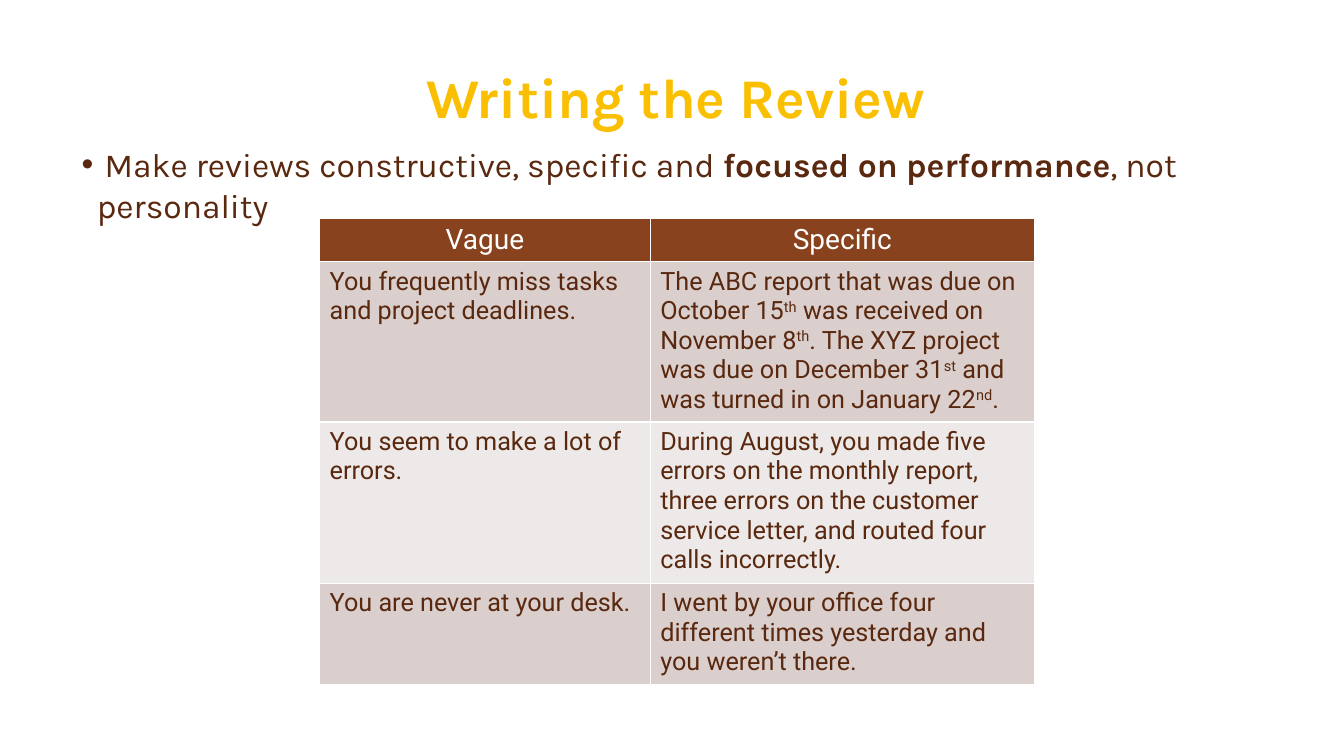
import pptx
import pptx.dml.color
import pptx.enum.text
import pptx.oxml
import pptx.oxml.ns
import pptx.util
from pptx.util import Inches

RGBColor = pptx.dml.color.RGBColor
Align = pptx.enum.text.PP_ALIGN
Anchor = pptx.enum.text.MSO_ANCHOR

GOLD = RGBColor(0xF9, 0xBF, 0x00)
BROWN = RGBColor(0x59, 0x28, 0x0F)
RUST = RGBColor(0x88, 0x43, 0x1E)
BAND_DARK = RGBColor(0xDA, 0xCF, 0xCD)
BAND_LIGHT = RGBColor(0xED, 0xE9, 0xE8)
WHITE = RGBColor(0xFF, 0xFF, 0xFF)

HEADINGS = ["Vague", "Specific"]
# A cell is a list of pieces; every second piece is superscript.
EXAMPLES = [
    (["You frequently miss tasks and project deadlines."],
     ["The ABC report that was due on October 15", "th",
      " was received on November 8", "th",
      ". The XYZ project was due on December 31", "st",
      " and was turned in on January 22", "nd", "."]),
    (["You seem to make a lot of errors."],
     ["During August, you made five errors on the monthly report, three errors "
      "on the customer service letter, and routed four calls incorrectly."]),
    (["You are never at your desk."],
     ["I went by your office four different times yesterday and you weren’t there."]),
]
COLUMN_WIDTHS = [3.28, 3.81]
ROW_HEIGHTS = [0.42, 1.59, 1.6, 1]


class ReviewSlide:
    heading_font = "Karla"
    table_font = "Roboto"

    def __init__(self, deck):
        self.slide = deck.slides.add_slide(deck.slide_layouts[1])

    def add_run(self, paragraph, text, font, size, color, bold=False, raised=False):
        run = paragraph.add_run()
        run.text = text
        run.font.name = font
        run.font.size = pptx.util.Pt(size)
        run.font.color.rgb = color
        run.font.bold = bold
        if raised:
            run.font._element.set("baseline", "30000")

    def place(self, placeholder, left, top, width, height, anchor):
        """Move a placeholder, clear its insets and return its first paragraph."""
        placeholder.left, placeholder.top = Inches(left), Inches(top)
        placeholder.width, placeholder.height = Inches(width), Inches(height)
        frame = placeholder.text_frame
        frame.margin_left = frame.margin_right = 0
        frame.margin_top = frame.margin_bottom = 0
        frame.word_wrap = True
        frame.auto_size = pptx.enum.text.MSO_AUTO_SIZE.NONE
        frame.vertical_anchor = anchor
        return frame.paragraphs[0]

    def title(self, text):
        heading = self.place(self.slide.shapes.title, 3.68, 0.56, 6.04, 0.74, Anchor.BOTTOM)
        heading.alignment = Align.CENTER
        heading.line_spacing = 0.9
        self.add_run(heading, text, self.heading_font, 40, GOLD, bold=True)

    def bullet(self, pieces):
        """Fill the body with one bullet; every second piece is bold."""
        advice = self.place(self.slide.placeholders[1], 0.71, 1.43, 11.78, 0.96, Anchor.TOP)
        properties = advice._p.get_or_add_pPr()
        properties.set("marL", str(Inches(0.25)))
        properties.set("indent", str(Inches(-0.15)))
        properties.append(pptx.oxml.parse_xml(
            f'<a:buChar {pptx.oxml.ns.nsdecls("a")} char="•"/>'))
        advice.alignment = Align.LEFT
        advice.space_before = pptx.util.Pt(0)
        for index, piece in enumerate(pieces):
            self.add_run(advice, piece, self.heading_font, 24, BROWN, bold=index % 2 == 1)

    def cell(self, cell, pieces, fill, color, size, alignment):
        properties = cell._tc.get_or_add_tcPr()
        for side in "LRTB":
            properties.append(pptx.oxml.parse_xml(
                f'<a:ln{side} {pptx.oxml.ns.nsdecls("a")} w="{pptx.util.Pt(1)}">'
                f'<a:solidFill><a:srgbClr val="{WHITE}"/></a:solidFill></a:ln{side}>'))
        cell.fill.solid()
        cell.fill.fore_color.rgb = fill
        paragraph = cell.text_frame.paragraphs[0]
        paragraph.alignment = alignment
        for index, piece in enumerate(pieces):
            self.add_run(paragraph, piece, self.table_font, size, color, raised=index % 2 == 1)

    def table(self, headings, examples):
        comparison = self.slide.shapes.add_table(
            len(ROW_HEIGHTS), len(COLUMN_WIDTHS), Inches(3.17), Inches(2.17),
            Inches(sum(COLUMN_WIDTHS)), Inches(sum(ROW_HEIGHTS))).table
        comparison.horz_banding = False
        comparison.first_row = False
        for column, width in zip(comparison.columns, COLUMN_WIDTHS):
            column.width = Inches(width)
        for row, height in zip(comparison.rows, ROW_HEIGHTS):
            row.height = Inches(height)
        for column, heading in enumerate(headings):
            self.cell(comparison.cell(0, column), [heading], RUST, WHITE, 20, Align.CENTER)
        for row, example in enumerate(examples, start=1):
            band = BAND_DARK if row % 2 else BAND_LIGHT
            for column, pieces in enumerate(example):
                self.cell(comparison.cell(row, column), pieces, band, BROWN, 18, Align.LEFT)


def main():
    deck = pptx.Presentation()
    deck.slide_width, deck.slide_height = Inches(13.33), Inches(7.5)
    review = ReviewSlide(deck)
    review.title("Writing the Review")
    review.bullet([" Make reviews constructive, specific and ",
                   "focused on performance", ", not personality"])
    review.table(HEADINGS, EXAMPLES)
    deck.save("out.pptx")


if __name__ == "__main__":
    main()
